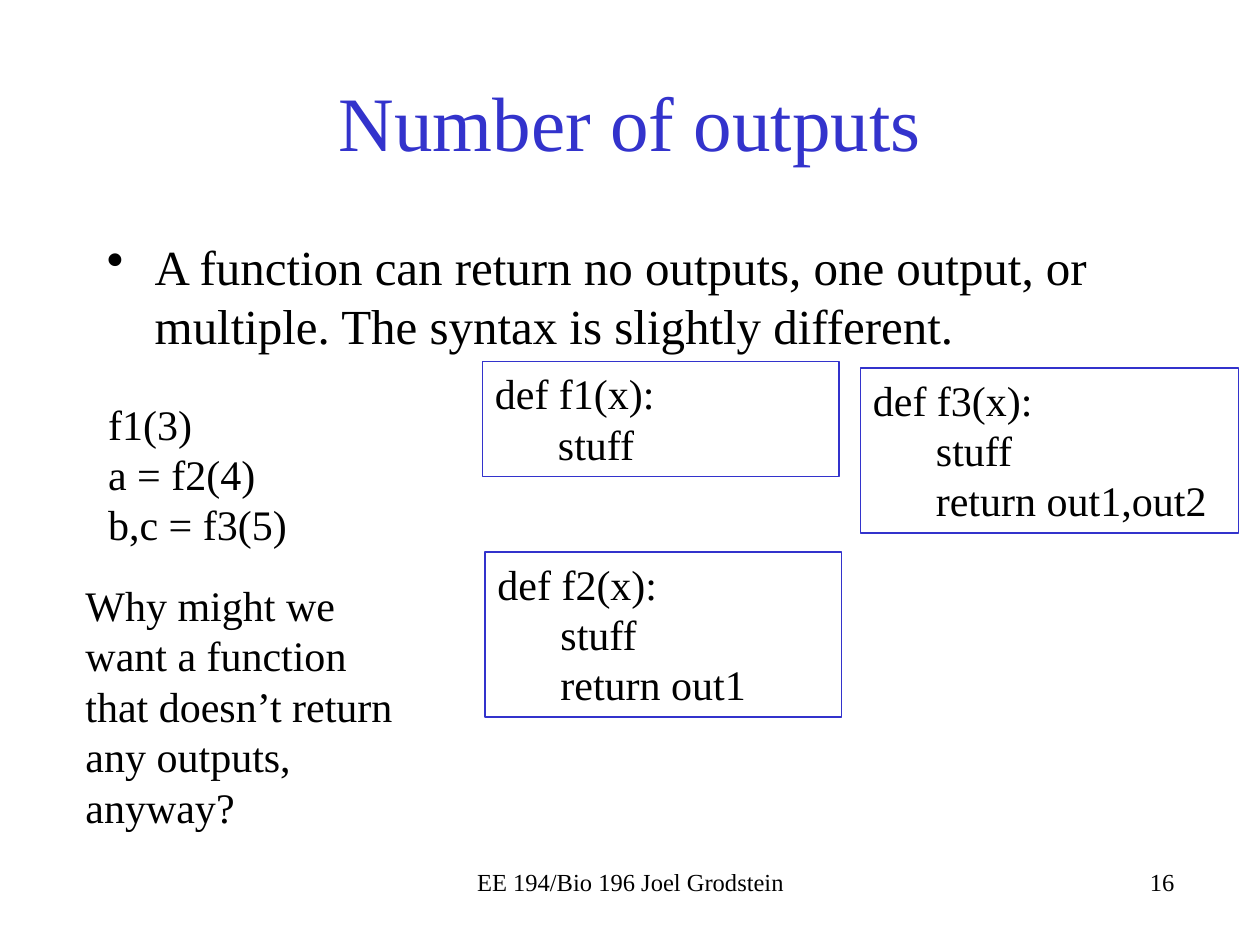
from pptx import Presentation
from pptx.dml.color import RGBColor
from pptx.enum.shapes import MSO_SHAPE
from pptx.enum.text import MSO_ANCHOR, PP_ALIGN
from pptx.oxml.ns import qn
from pptx.util import Inches, Pt
from lxml import etree

RECTANGLE = MSO_SHAPE.RECTANGLE
TOP, MIDDLE = MSO_ANCHOR.TOP, MSO_ANCHOR.MIDDLE
LEFT, CENTER, RIGHT = PP_ALIGN.LEFT, PP_ALIGN.CENTER, PP_ALIGN.RIGHT

FONT = "Times New Roman"
COLORS = {"text": "000000", "accent": "3333CC"}
CODE_INDENT = 0.5
BULLET_INDENT = 0.38

TEXTS = [
    (["Number of outputs"], (0.75, 0.33, 8.5, 1.25),
     {"size": 44, "color": "accent", "align": CENTER, "anchor": MIDDLE}),
    (["A function can return no outputs, one output, or multiple. "
      "The syntax is slightly different."], (0.75, 1.83, 8.5, 1.5),
     {"size": 28, "bullet": "•", "space_before": 5.6}),
    (["f1(3)", "a = f2(4)", "b,c = f3(5)"], (0.76, 3.11, 2.17, 1.31), {}),
    (["Why might we want a function that doesn’t return any outputs, anyway?"],
     (0.58, 4.55, 2.83, 2.12), {}),
    (["EE 194/Bio 196 Joel Grodstein"], (3.42, 6.83, 3.17, 0.5),
     {"size": 14, "align": CENTER}),
    (["16"], (6.25, 6.83, 3.17, 0.5), {"size": 14, "align": RIGHT}),
]

FUNCTIONS = [
    ("def f3(x):", ["stuff", "return out1,out2"], (6.83, 2.92, 3, 1.31)),
    ("def f2(x):", ["stuff", "return out1"], (3.85, 4.38, 2.83, 1.31)),
    ("def f1(x):", ["stuff"], (3.83, 2.87, 2.83, 0.91)),
]


def set_indent(paragraph, left, first=0):
    properties = paragraph._p.get_or_add_pPr()
    properties.set("marL", str(Inches(left)))
    properties.set("indent", str(Inches(first)))
    return properties


def write_text(shape, lines, size=24, color="text", align=LEFT, anchor=TOP,
               bullet=None, space_before=0, body_indent=0):
    frame = shape.text_frame
    frame.word_wrap = True
    frame.vertical_anchor = anchor
    for index, line in enumerate(lines):
        paragraph = frame.add_paragraph() if index else frame.paragraphs[0]
        paragraph.alignment = align
        paragraph.space_before = Pt(space_before)
        run = paragraph.add_run()
        run.text = line
        run.font.name = FONT
        run.font.size = Pt(size)
        run.font.color.rgb = RGBColor.from_string(COLORS[color])
        if bullet:
            properties = set_indent(paragraph, BULLET_INDENT, -BULLET_INDENT)
            etree.SubElement(properties, qn("a:buChar")).set("char", bullet)
        elif index and body_indent:
            paragraph.level = 1
            set_indent(paragraph, body_indent)


def add_function_box(slide, header, body, place):
    shape = slide.shapes.add_shape(RECTANGLE, *map(Inches, place))
    shape.shadow.inherit = False
    shape.fill.background()
    shape.line.color.rgb = RGBColor.from_string(COLORS["accent"])
    shape.line.width = Pt(0.75)
    write_text(shape, [header, *body], body_indent=CODE_INDENT)


def main():
    presentation = Presentation()
    presentation.slide_width = Inches(10)
    presentation.slide_height = Inches(7.5)
    slide = presentation.slides.add_slide(presentation.slide_layouts[6])
    for lines, place, style in TEXTS:
        write_text(slide.shapes.add_textbox(*map(Inches, place)), lines, **style)
    for header, body, place in FUNCTIONS:
        add_function_box(slide, header, body, place)
    presentation.save("out.pptx")


if __name__ == "__main__":
    main()
